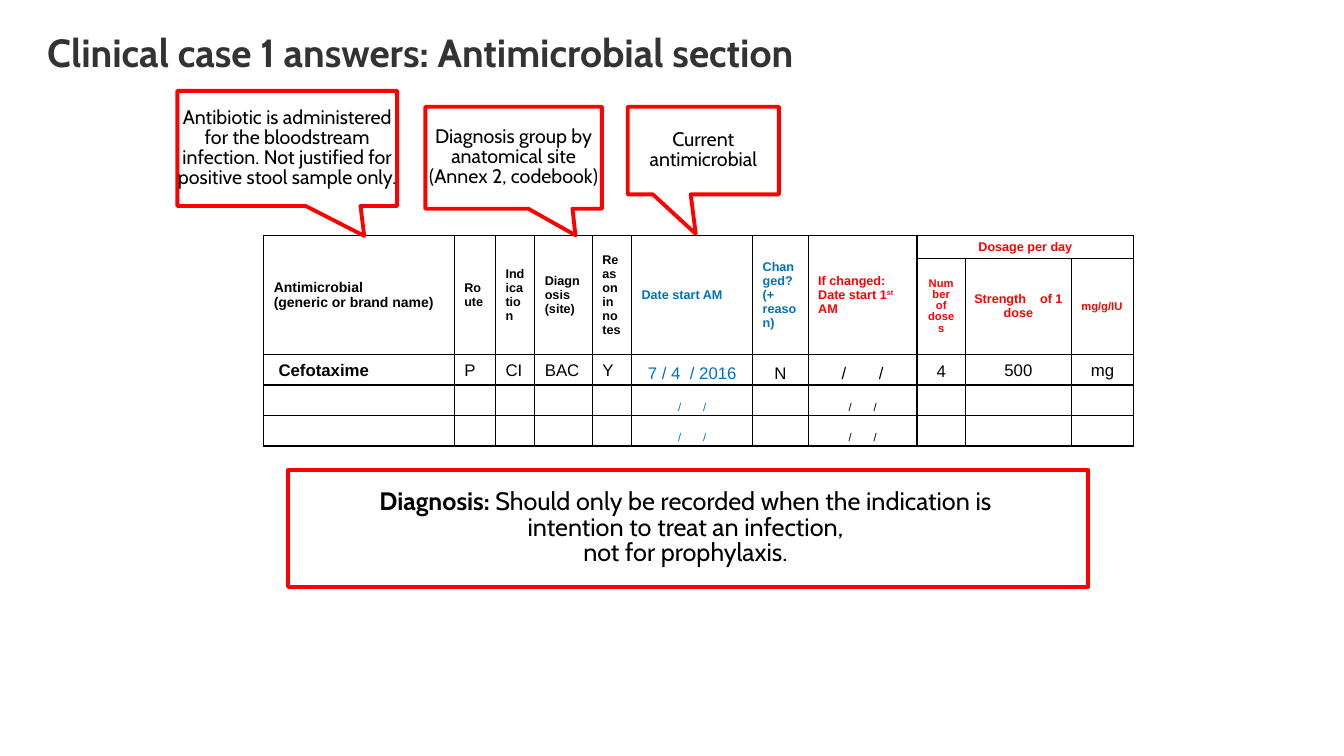
from dataclasses import dataclass
from itertools import product

from lxml import etree
from pptx import Presentation
from pptx.dml.color import RGBColor
from pptx.enum.shapes import MSO_SHAPE as Preset
from pptx.enum.text import MSO_ANCHOR as Anchor, MSO_AUTO_SIZE as AutoSize, PP_ALIGN as Align
from pptx.oxml.ns import qn
from pptx.util import Cm, Pt

BLACK, RED, BLUE, GREY = "000000", "FF0000", "0070C0", "333333"
BORDER_WIDTH = Pt(1)


@dataclass(frozen=True)
class Span:
    text: str
    bold: bool = False
    raised: int = 0  # baseline shift, thousandths of a percent
    gap: float = 0  # extra letter spacing in points


@dataclass(frozen=True)
class Box:
    shape: Preset
    area: tuple[float, float, float, float]
    size: int
    paras: list[list[Span]]
    tip: tuple[float, ...] = ()


@dataclass(frozen=True)
class Entry:
    row: int
    column: int
    paras: list[list[Span]]
    size: int = 9
    color: str = BLACK
    align: Align = Align.LEFT
    anchor: Anchor = Anchor.MIDDLE
    pad: tuple[float, float] = (0.25, 0.13)
    spacing: Pt | None = None
    left: float | None = None


def hex_color(value: str) -> RGBColor:
    return RGBColor.from_string(value)


def apply(target, values: dict) -> None:
    for name, value in values.items():
        setattr(target, name, value)


def write(frame, paras: list[list[Span]], font: str, size: int, color: str, align: Align,
          spacing=None) -> None:
    for index, spans in enumerate(paras):
        para = frame.paragraphs[0] if index == 0 else frame.add_paragraph()
        apply(para, {"alignment": align, "line_spacing": spacing, "space_before": Pt(0)})
        for span in spans:
            run = para.add_run()
            run.text = span.text
            apply(run.font, {"name": font, "size": Pt(size), "bold": span.bold})
            run.font.color.rgb = hex_color(color)
            properties = run.font._element
            if span.raised:
                properties.set("baseline", str(span.raised))
            if span.gap:
                properties.set("spc", str(round(span.gap * 100)))


def margins(x: float, y: float, left: float | None = None) -> dict:
    return {"margin_left": Cm(x if left is None else left), "margin_right": Cm(x),
            "margin_top": Cm(y), "margin_bottom": Cm(y)}


def draw_box(page, box: Box) -> None:
    shape = page.shapes.add_shape(box.shape, *map(Cm, box.area))
    shape.shadow.inherit = False
    shape.fill.background()
    shape.line.color.rgb = hex_color(RED)
    shape.line.width = Pt(2.75)
    for index, value in enumerate(box.tip):
        shape.adjustments[index] = value
    frame = shape.text_frame
    apply(frame, margins(0, 0) | {"word_wrap": True, "vertical_anchor": Anchor.MIDDLE})
    write(frame, box.paras, "Cabin", box.size, BLACK, Align.CENTER, 0.85)


def add_borders(cell) -> None:
    properties = cell._tc.get_or_add_tcPr()
    for index, side in enumerate(("lnL", "lnR", "lnT", "lnB")):
        line = etree.Element(qn(f"a:{side}"), w=str(BORDER_WIDTH))
        fill = etree.SubElement(line, qn("a:solidFill"))
        etree.SubElement(fill, qn("a:srgbClr"), val=BLACK)
        properties.insert(index, line)


def draw_table(page, columns: list[float], rows: list[float], entries: list[Entry]) -> None:
    table = page.shapes.add_table(len(rows), len(columns), Cm(6.65), Cm(5.94),
                                  Cm(sum(columns)), Cm(sum(rows))).table
    apply(table, {"first_row": False, "horz_banding": False})
    for column, width in zip(table.columns, columns):
        column.width = Cm(width)
    for row, height in zip(table.rows, rows):
        row.height = Cm(height)
    for row, column in product(range(len(rows)), range(len(columns))):
        cell = table.cell(row, column)
        cell.fill.background()
        add_borders(cell)
        cell.text_frame.paragraphs[0].font.size = Pt(8)
    for column in range(8):
        table.cell(0, column).merge(table.cell(1, column))
    table.cell(0, 8).merge(table.cell(0, 10))
    for entry in entries:
        cell = table.cell(entry.row, entry.column)
        apply(cell, margins(*entry.pad, entry.left) | {"vertical_anchor": entry.anchor})
        write(cell.text_frame, entry.paras, "Arial", entry.size, entry.color, entry.align,
              entry.spacing)


def heading(text: str) -> list[list[Span]]:
    return [[Span(text, bold=True)]]


def blank_date(gap: float) -> list[list[Span]]:
    return [[Span("/"), Span(" ", gap=gap), Span("/")]]


def value(column: int, text: str, **changes) -> Entry:
    return Entry(2, column, [[Span(text)]], 12, anchor=Anchor.BOTTOM, **changes)


CENTERED = {"align": Align.CENTER}
TIGHT = CENTERED | {"pad": (0.1, 0.05)}
DATE = TIGHT | {"anchor": Anchor.BOTTOM}
FLUSH = CENTERED | {"pad": (0, 0), "color": RED}

COLUMNS = [4.8, 1.04, 0.99, 1.45, 0.99, 3.05, 1.4, 2.74, 1.22, 2.67, 1.57]
ROWS = [0.58, 2.41, 0.77, 0.77, 0.77]

HEADER = [
    Entry(0, 0, heading("Antimicrobial") + heading("(generic or brand name)"), 10),
    *(Entry(0, column, heading(text)) for column, text in
      enumerate(("Route", "Indication", "Diagnosis (site)", "Reason in notes"), 1)),
    Entry(0, 5, heading("Date start AM"), color=BLUE),
    Entry(0, 6, heading("Changed? (+ reason)"), color=BLUE),
    Entry(0, 7, [[Span("If changed: Date start 1", True), Span("st", True, 30000),
                  Span(" AM", True)]], color=RED),
    Entry(0, 8, heading("Dosage per day"), **FLUSH),
    Entry(1, 8, heading("Number of doses"), 8, RED, Align.CENTER, spacing=Pt(8)),
    Entry(1, 9, [[Span("Strength", True), Span(" ", True, gap=7.5), Span("of 1 dose", True)]],
          **FLUSH),
    Entry(1, 10, heading("mg/g/IU"), 8, RED),
]
RECORD = [
    Entry(2, 0, heading("Cefotaxime"), 12, anchor=Anchor.BOTTOM, left=0.37),
    *(value(column, text) for column, text in enumerate(("P", "CI", "BAC", "Y"), 1)),
    Entry(2, 5, [[Span("7 / 4"), Span(" ", gap=3.3), Span("/ 2016")]], 12, BLUE, **DATE),
    value(6, "N", **TIGHT),
    Entry(2, 7, blank_date(20), 12, **DATE),
    value(8, "4", align=Align.CENTER, pad=(0.1, 0.1)),
    value(9, "500", **CENTERED),
    value(10, "mg", **CENTERED),
]
EMPTY_DATES = [Entry(row, column, blank_date(13.3), 8, color, **DATE)
               for row, (column, color) in product((3, 4), ((5, BLUE), (7, BLACK)))]

DIAGNOSIS = Box(Preset.RECTANGLE, (7.26, 11.84, 20.17, 2.95), 18, [
    [Span("Diagnosis:", True), Span(" Should only be recorded when the indication is ")],
    [Span("intention to treat an infection, ")],
    [Span("not for prophylaxis. ")]])
CALLOUTS = [
    Box(Preset.RECTANGULAR_CALLOUT, (10.72, 2.69, 4.45, 2.57), 14,
        [[Span("Diagnosis group by anatomical site")], [Span("(Annex 2, codebook)")]],
        (0.35, 0.76)),
    Box(Preset.RECTANGULAR_CALLOUT, (15.82, 2.69, 3.81, 2.21), 14,
        [[Span("Current antimicrobial")]], (-0.05, 0.95)),
    Box(Preset.RECTANGULAR_CALLOUT, (4.47, 2.29, 5.54, 2.9), 14,
        [[Span("Antibiotic is administered for the bloodstream infection. "
               "Not justified for positive stool sample only.")]], (0.35, 0.76)),
]


def main() -> None:
    deck = Presentation()
    apply(deck, {"slide_width": Cm(33.87), "slide_height": Cm(19.05)})
    page = deck.slides.add_slide(deck.slide_layouts[5])

    # Title
    title = page.shapes.title
    apply(title, {"left": Cm(1.19), "top": Cm(0.84), "width": Cm(28.65), "height": Cm(2.21)})
    apply(title.text_frame, margins(0, 0) | {"vertical_anchor": Anchor.TOP, "word_wrap": True,
                                             "auto_size": AutoSize.NONE})
    write(title.text_frame, heading("Clinical case 1 answers: Antimicrobial section"),
          "Cabin", 28, GREY, Align.LEFT, 0.9)

    # Table of antimicrobials
    draw_table(page, COLUMNS, ROWS, HEADER + RECORD + EMPTY_DATES)

    # Explanations
    for box in (DIAGNOSIS, *CALLOUTS):
        draw_box(page, box)

    deck.save("out.pptx")


if __name__ == "__main__":
    main()
